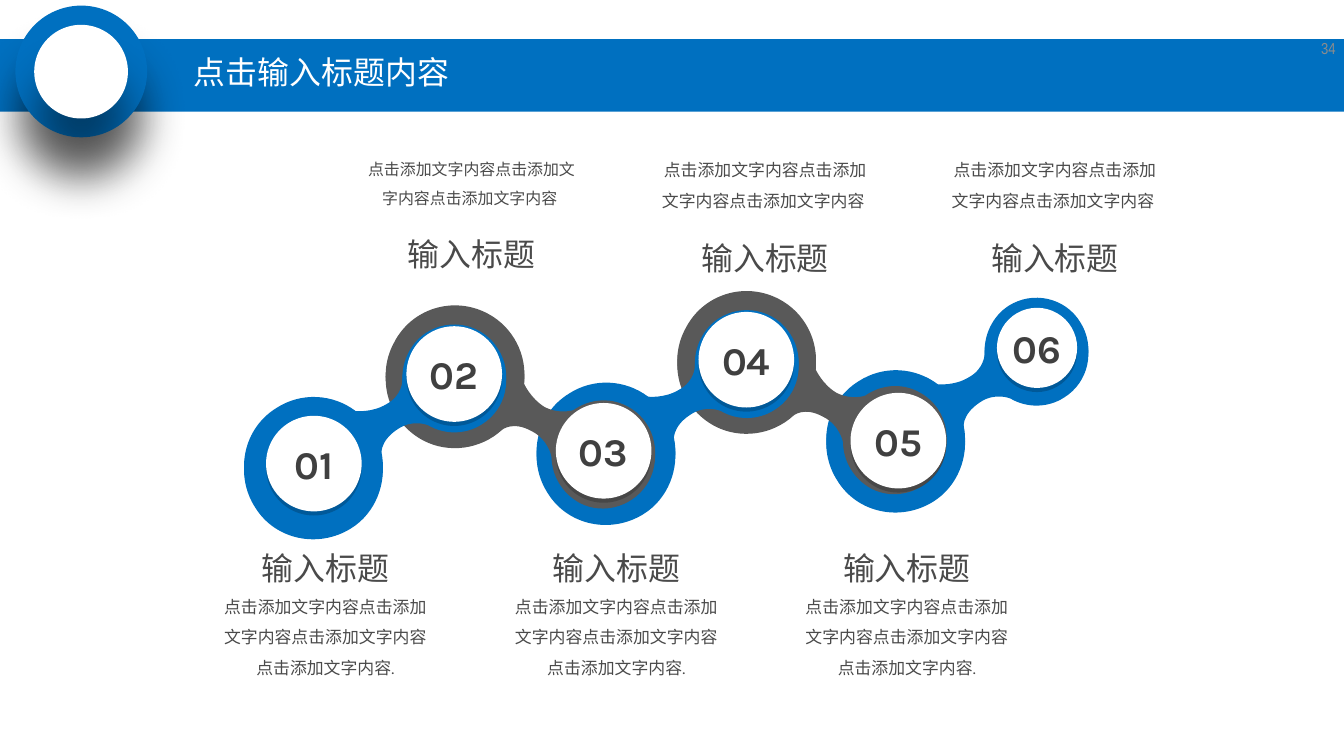
from dataclasses import dataclass
from lxml.etree import SubElement
from pptx import Presentation
from pptx.dml.color import RGBColor
from pptx.enum.shapes import MSO_SHAPE
from pptx.enum.text import MSO_ANCHOR, MSO_AUTO_SIZE, PP_ALIGN
from pptx.oxml.ns import qn
from pptx.util import Cm, Pt


@dataclass(frozen=True)
class Theme:
    blue: str = "0070C0"
    grey: str = "595959"
    white: str = "FFFFFF"
    black: str = "000000"
    number: str = "404040"
    text: str = "4A4A4A"
    page: str = "8C8C8C"
    heading_font: str = "Arial Narrow"
    body_font: str = "Karla"
    heading_size: float = 24
    number_size: float = 29.6
    body_size: float = 12.7
    small_size: float = 12


theme = Theme()


def paint(shape, color):
    shape.shadow.inherit = False
    shape.fill.solid()
    shape.fill.fore_color.rgb = RGBColor.from_string(color)
    shape.line.fill.background()


def write(paragraph, text, font, size, color, bold=False, **layout):
    run = paragraph.add_run()
    run.text = text
    for name, value in {"name": font, "size": Pt(size), "bold": bold}.items():
        setattr(run.font, name, value)
    run.font.color.rgb = RGBColor.from_string(color)
    for name, value in {"alignment": PP_ALIGN.CENTER, **layout}.items():
        setattr(paragraph, name, value)


presentation = Presentation()
presentation.slide_width = Cm(35.71)
presentation.slide_height = Cm(20.09)
slide = presentation.slides.add_slide(presentation.slide_layouts[5])
shapes = slide.shapes

band = shapes.add_shape(MSO_SHAPE.RECTANGLE, 0, Cm(1.04), Cm(35.71), Cm(1.93))
paint(band, theme.blue)

for left, top, size, color in [(0.41, 0.15, 3.5, theme.blue), (0.91, 0.66, 2.49, theme.white)]:
    badge = shapes.add_shape(MSO_SHAPE.OVAL, Cm(left), Cm(top), Cm(size), Cm(size))
    paint(badge, color)
    effects = badge.element.find(".//" + qn("a:effectLst"))
    shadow = SubElement(effects, qn("a:outerShdw"), blurRad=str(Pt(33)), dist=str(Pt(33)),
                        dir="5400000", algn="t", rotWithShape="0")
    shadow_color = SubElement(shadow, qn("a:srgbClr"), val=theme.black)
    SubElement(shadow_color, qn("a:alpha"), val="43000")

title = shapes.title
title.element.getparent().append(title.element)
for name, value in {"left": Cm(4.9), "top": Cm(1.27), "width": Cm(8.81), "height": Cm(1.4)}.items():
    setattr(title, name, value)
for name, value in {"word_wrap": True, "auto_size": MSO_AUTO_SIZE.NONE,
                    "vertical_anchor": MSO_ANCHOR.MIDDLE}.items():
    setattr(title.text_frame, name, value)
write(title.text_frame.paragraphs[0], "点击输入标题内容", theme.heading_font, theme.heading_size,
      theme.white, alignment=PP_ALIGN.LEFT, line_spacing=0.9)

unit = Cm(0.0254)
rising_link = [
    (1030, 370), (1030, 370), (1030, 386), (1013, 395), (998, 404), (981, 402), (981, 402),
    (957, 384), (924, 382), (898, 399), (864, 420), (854, 465), (876, 499),
    (897, 533), (942, 542), (976, 521), (1002, 505), (1014, 473), (1008, 445),
    (1008, 445), (1005, 430), (1025, 417), (1041, 406), (1057, 413), (1057, 413),
    (1074, 423), (1096, 423), (1113, 412), (1139, 396), (1146, 362), (1130, 337),
    (1114, 311), (1080, 304), (1055, 320), (1038, 331), (1029, 351), (1030, 370),
]
falling_link = [
    (905, 414), (905, 414), (891, 419), (875, 411), (860, 402), (853, 386), (853, 386),
    (857, 357), (842, 327), (815, 313), (779, 294), (735, 308), (717, 344),
    (698, 379), (712, 423), (748, 442), (775, 456), (808, 451), (830, 431),
    (830, 431), (841, 421), (861, 432), (879, 441), (882, 459), (882, 459),
    (882, 478), (893, 497), (911, 507), (937, 521), (970, 510), (984, 484),
    (998, 457), (988, 424), (961, 410), (942, 400), (921, 403), (905, 414),
]
links = [
    (rising_link, theme.blue, 0, 0),
    (falling_link, theme.grey, 0, 0),
    (rising_link, theme.blue, -303, 13),
    (falling_link, theme.grey, -305, 15),
    (rising_link, theme.blue, -609, 28),
]
for outline, color, shift_x, shift_y in links:
    for drop in (4, 0):
        points = [((x + shift_x) * unit, (y + shift_y + drop) * unit) for x, y in outline]
        builder = shapes.build_freeform(*points[0])
        builder.add_line_segments(points[1:], close=True)
        link = builder.convert_to_shape()
        paint(link, color)
        segments = link.element.findall(".//" + qn("a:lnTo"))[:len(points) - 1]
        for start in range(0, len(segments), 3):
            curve = segments[start].makeelement(qn("a:cubicBezTo"))
            segments[start].addprevious(curve)
            for segment in segments[start:start + 3]:
                curve.append(segment[0])
                segment.getparent().remove(segment)

discs = [(7.07, 11.05, 2.54), (10.8, 8.67, 2.54), (14.77, 10.71, 2.54),
         (18.56, 8.29, 2.54), (22.6, 10.44, 2.54), (26.49, 8.18, 2.13)]
for number, (left, top, size) in enumerate(discs, 1):
    shade = shapes.add_shape(MSO_SHAPE.OVAL, Cm(left), Cm(top + 0.11), Cm(size), Cm(size))
    paint(shade, theme.black)
    shade_color = shade.element.spPr.find(qn("a:solidFill")).find(qn("a:srgbClr"))
    SubElement(shade_color, qn("a:alpha"), val="20000")
    disc = shapes.add_shape(MSO_SHAPE.OVAL, Cm(left), Cm(top), Cm(size), Cm(size))
    paint(disc, theme.white)
    for name, value in {"word_wrap": False, "vertical_anchor": MSO_ANCHOR.MIDDLE,
                        "margin_left": 0, "margin_right": 0}.items():
        setattr(disc.text_frame, name, value)
    write(disc.text_frame.paragraphs[0], f"{number:02}", theme.body_font, theme.number_size,
          theme.number, bold=True)

heading = "输入标题"
upper_text = "点击添加文字内容点击添加文字内容点击添加文字内容 "
lower_text = upper_text + "点击添加文字内容."
upper_large = [(upper_text, theme.body_size), (heading, theme.heading_size)]
upper_small = [(upper_text, theme.small_size), (heading, theme.heading_size)]
lower = [(heading, theme.heading_size), (lower_text, theme.body_size)]
captions = [
    (5.66, 13.94, 5.97, 5.03, 0, lower),
    (13.39, 13.94, 5.97, 5.03, 0, lower),
    (21.11, 13.94, 5.97, 5.03, 0, lower),
    (9.42, 3.86, 6.22, 4.57, 6.3, upper_small),
    (17.22, 3.86, 6.22, 4.65, 6.3, upper_large),
    (24.92, 3.86, 6.22, 4.65, 6.3, upper_large),
]
for left, top, width, height, gap, lines in captions:
    frame = shapes.add_textbox(Cm(left), Cm(top), Cm(width), Cm(height)).text_frame
    frame.word_wrap = True
    for index, (text, size) in enumerate(lines):
        paragraph = frame.add_paragraph() if index else frame.paragraphs[0]
        write(paragraph, text, theme.body_font, size, theme.text,
              line_spacing=1.5, space_before=Pt(gap))

page_frame = shapes.add_textbox(Cm(33.99), Cm(0.74), Cm(1.75), Cm(1.07)).text_frame
page_frame.word_wrap = True
page_frame.vertical_anchor = MSO_ANCHOR.MIDDLE
write(page_frame.paragraphs[0], "34", theme.heading_font, theme.small_size, theme.page,
      alignment=PP_ALIGN.RIGHT)

presentation.save("out.pptx")
